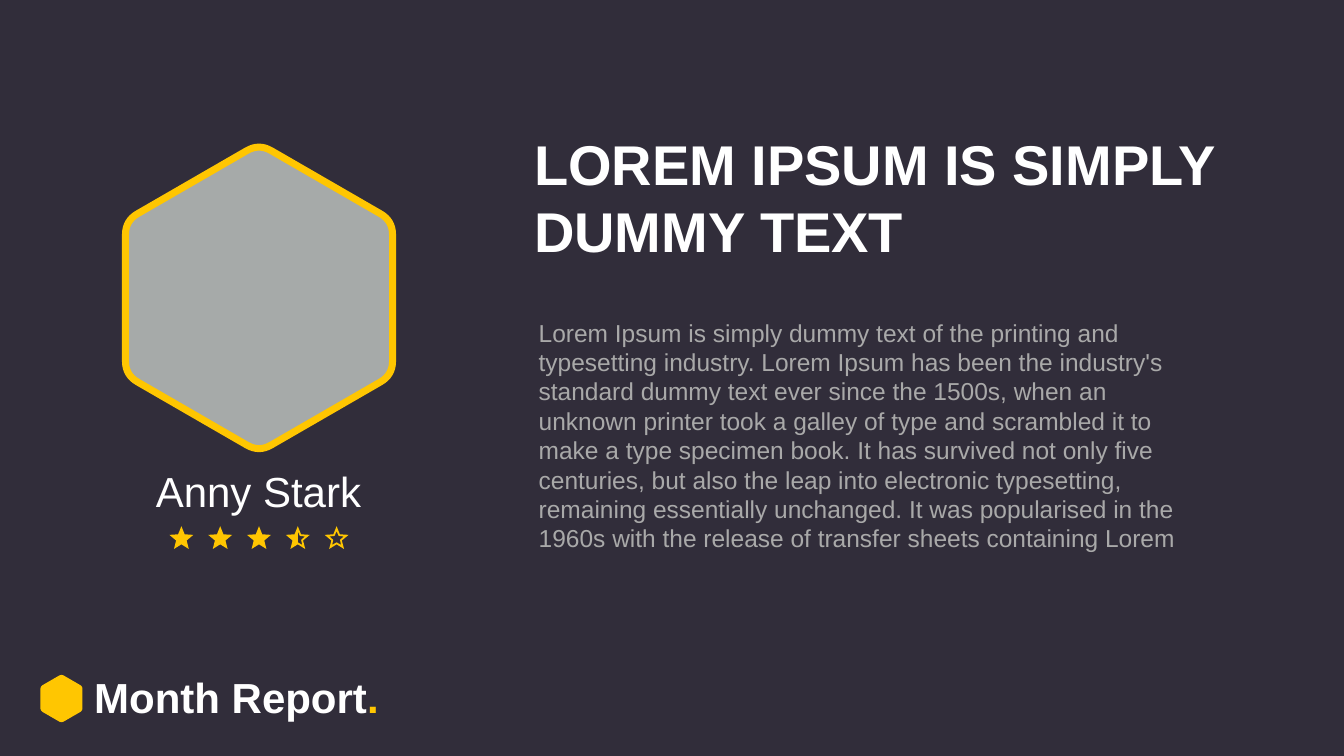
from dataclasses import dataclass
from math import cos, pi, sin

from pptx import Presentation
from pptx.dml.color import RGBColor
from pptx.enum.text import MSO_ANCHOR as Anchor, PP_ALIGN as Align
from pptx.slide import Slide
from pptx.util import Inches, Pt

NIGHT = RGBColor(0x31, 0x2D, 0x3A)
GOLD = RGBColor(0xFF, 0xC6, 0x01)
WHITE = RGBColor(0xFF, 0xFF, 0xFF)
SILVER = RGBColor(0xA9, 0xA9, 0xA9)
STEEL = RGBColor(0xA6, 0xAA, 0xA9)

TITLE = "LOREM IPSUM IS SIMPLY\nDUMMY TEXT"
BODY = (
    "Lorem Ipsum is simply dummy text of the printing and typesetting industry. "
    "Lorem Ipsum has been the industry's standard dummy text ever since the 1500s, "
    "when an unknown printer took a galley of type and scrambled it to make a type "
    "specimen book. It has survived not only five centuries, but also the leap into "
    "electronic typesetting, remaining essentially unchanged. It was popularised in "
    "the 1960s with the release of transfer sheets containing Lorem"
)


def ring(x, y, radii):
    step = 2 * pi / len(radii)
    return [(x + r * sin(i * step), y - r * cos(i * step)) for i, r in enumerate(radii)]


def toward(origin, target, share):
    return tuple(a + (b - a) * share for a, b in zip(origin, target))


def rounded(corners, cut, steps=8):
    points = []
    for i, corner in enumerate(corners):
        before, after = corners[i - 1], corners[(i + 1) % len(corners)]
        start, end = toward(corner, before, cut), toward(corner, after, cut)
        for k in range(steps + 1):
            t = k / steps
            points.append(toward(toward(start, corner, t), toward(corner, end, t), t))
    return points


@dataclass
class Painter:
    page: Slide
    font: str = "Arial"
    inset: float = 0.06

    def background(self, color):
        fill = self.page.background.fill
        fill.solid()
        fill.fore_color.rgb = color

    def style(self, span, size, color, bold):
        span.font.name = self.font
        span.font.size = Pt(size)
        span.font.bold = bold
        span.font.color.rgb = color

    def text(self, area, content, size, color, bold=False, align=Align.LEFT,
             anchor=Anchor.TOP):
        box = self.page.shapes.add_textbox(*map(Inches, area))
        frame = box.text_frame
        frame.word_wrap = True
        frame.vertical_anchor = anchor
        frame.margin_left = frame.margin_right = Inches(self.inset)
        frame.margin_top = frame.margin_bottom = Inches(self.inset)
        frame.text = content
        for para in frame.paragraphs:
            para.alignment = align
            for span in para.runs:
                self.style(span, size, color, bold)
        return box

    def outline(self, contours, fill, line=None, width=0):
        builder = None
        for contour in contours:
            points = [(Inches(x), Inches(y)) for x, y in contour]
            if builder is None:
                builder = self.page.shapes.build_freeform(*points[0], scale=1.0)
            else:
                builder.move_to(*points[0])
            builder.add_line_segments(points[1:], close=True)
        shape = builder.convert_to_shape()
        shape.shadow.inherit = False
        shape.fill.solid()
        shape.fill.fore_color.rgb = fill
        if line is None:
            shape.line.fill.background()
        else:
            shape.line.color.rgb = line
            shape.line.width = Pt(width)

    def hexagon(self, x, y, radius, fill, line, width):
        self.outline([rounded(ring(x, y, [radius] * 6), 0.09)], fill, line, width)

    def star(self, x, y, hole_points):
        contours = [ring(x, y, [0.25, 0.11] * 5)]
        if hole_points:
            contours.append(ring(x, y, [0.15, 0.07] * 5)[:hole_points])
        self.outline(contours, GOLD)


def main():
    deck = Presentation()
    deck.slide_width, deck.slide_height = Inches(26.67), Inches(15)
    painter = Painter(deck.slides.add_slide(deck.slide_layouts[6]))
    painter.background(NIGHT)

    painter.hexagon(1.22, 13.86, 0.45, GOLD, GOLD, 4)
    footer = painter.text((1.81, 13.26, 5.81, 1.12), "Month Report", 60, WHITE,
                          bold=True, anchor=Anchor.MIDDLE)
    dot = footer.text_frame.paragraphs[0].add_run()
    dot.text = "."
    painter.style(dot, 60, GOLD, True)

    painter.text((10.54, 2.51, 15.84, 3.1), TITLE, 80, WHITE, bold=True)
    painter.text((10.63, 6.24, 13.05, 5.88), BODY, 35, SILVER)
    painter.text((2.26, 9.19, 5.74, 1.11), "Anny Stark", 60, WHITE,
                 align=Align.CENTER, anchor=Anchor.MIDDLE)

    for i, hole_points in enumerate((0, 0, 0, 6, 10)):
        painter.star(3.6 + 0.77 * i, 10.69, hole_points)
    painter.hexagon(5.14, 5.91, 3.06, STEEL, GOLD, 10)

    deck.save("out.pptx")


if __name__ == "__main__":
    main()
